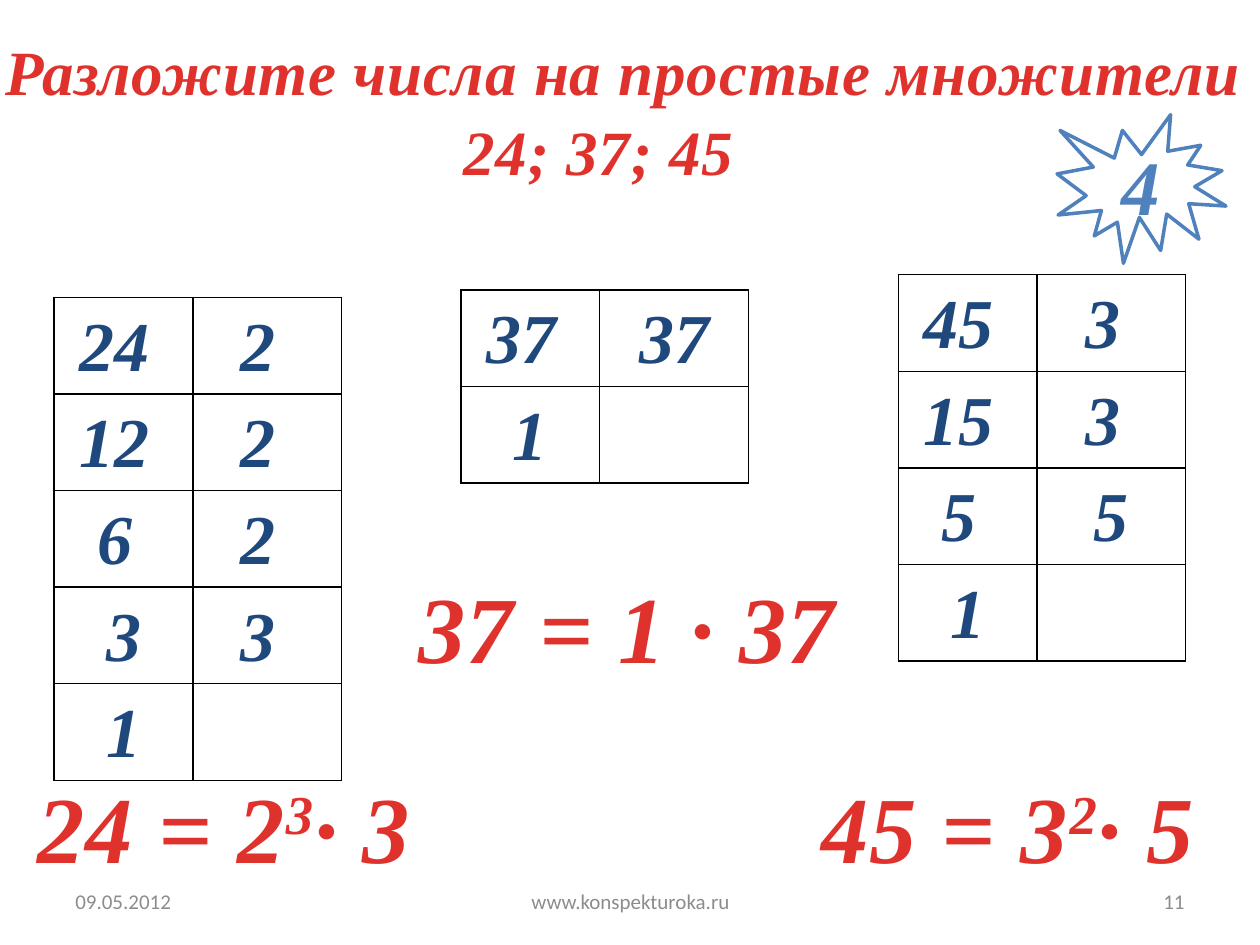
from lxml.etree import SubElement
from pptx import Presentation
from pptx.dml.color import RGBColor
from pptx.enum.shapes import MSO_SHAPE
from pptx.enum.text import MSO_ANCHOR, MSO_AUTO_SIZE, PP_ALIGN
from pptx.oxml.ns import qn
from pptx.util import Inches, Pt

COLORS = {"red": "E0322D", "navy": "1F497D", "blue": "4F81BD",
          "gray": "8C8C8C", "white": "FFFFFF", "black": "000000"}
SERIF = "Times New Roman"
COLUMNS = (1.1, 1.18)
ROW_HEIGHT = 0.76
TITLE_ONLY = 5


def color(name):
    return RGBColor.from_string(COLORS[name])


def add_span(para, text, size, shade, font=SERIF, spacing=0, baseline=0):
    """Add one run; the serif face is always bold italic on this slide."""
    span = para.add_run()
    span.text = text
    span.font.name = font
    span.font.size = Pt(size)
    span.font.color.rgb = color(shade)
    span.font.bold = span.font.italic = font == SERIF
    properties = span.font._element
    if spacing:
        properties.set("spc", str(spacing))
    if baseline:
        properties.set("baseline", str(baseline))


def place(box, left, top, width, height):
    box.left, box.top = Inches(left), Inches(top)
    box.width, box.height = Inches(width), Inches(height)


def add_box(page, area):
    return page.shapes.add_textbox(*map(Inches, area))


def write_heading(page):
    title = page.shapes.title
    place(title, -0.06, 0.21, 10.06, 0.71)
    numbers = add_box(page, (3.58, 0.84, 2.36, 0.71))
    for box, text in ((title, "Разложите числа на простые множители"),
                      (numbers, "24; 37; 45")):
        frame = box.text_frame
        frame.word_wrap = False
        frame.auto_size = MSO_AUTO_SIZE.NONE
        frame.vertical_anchor = MSO_ANCHOR.TOP
        para = frame.paragraphs[0]
        para.alignment = PP_ALIGN.LEFT
        add_span(para, text, 36, "red", spacing=50)


def add_equation(page, area, start, power="", end=""):
    frame = add_box(page, area).text_frame
    frame.word_wrap = False
    para = frame.paragraphs[0]
    for text, baseline in ((start, 0), (power, 30000), (end, 0)):
        if text:
            add_span(para, text, 54, "red", spacing=50, baseline=baseline)


def outline_cell(cell):
    properties = cell._tc.get_or_add_tcPr()
    for position, side in enumerate(("lnL", "lnR", "lnT", "lnB")):
        line = SubElement(properties, qn(f"a:{side}"), w=str(Pt(1)))
        fill = SubElement(line, qn("a:solidFill"))
        SubElement(fill, qn("a:srgbClr"), val=COLORS["black"])
        properties.insert(position, line)


def add_factor_table(page, left, top, rows):
    """Draw the division ladder: remaining number, then its prime divisor."""
    holder = page.shapes.add_table(
        len(rows), len(COLUMNS), Inches(left), Inches(top),
        Inches(sum(COLUMNS)), Inches(ROW_HEIGHT * len(rows)))
    table = holder.table
    table.first_row = table.horz_banding = False
    for column, width in zip(table.columns, COLUMNS):
        column.width = Inches(width)
    for row_index, row in enumerate(rows):
        for column_index, text in enumerate(row):
            cell = table.cell(row_index, column_index)
            cell.fill.background()
            outline_cell(cell)
            cell.margin_left = cell.margin_right = Inches(0.03)
            cell.margin_top = cell.margin_bottom = 0
            if text:
                para = cell.text_frame.paragraphs[0]
                para.alignment = PP_ALIGN.CENTER
                para.line_spacing = 1.15
                add_span(para, text, 40, "navy")


def add_badge(page, area, text):
    badge = page.shapes.add_shape(MSO_SHAPE.EXPLOSION1, *map(Inches, area))
    badge.shadow.inherit = False
    badge.fill.solid()
    badge.fill.fore_color.rgb = color("white")
    badge.line.color.rgb = color("blue")
    badge.line.width = Pt(2)
    badge.text_frame.vertical_anchor = MSO_ANCHOR.MIDDLE
    para = badge.text_frame.paragraphs[0]
    para.alignment = PP_ALIGN.CENTER
    add_span(para, text, 44, "blue")


def add_footer(page, top, height):
    for left, width, text, alignment in (
            (0.5, 2.33, "09.05.2012", PP_ALIGN.LEFT),
            (3.42, 3.17, "www.konspekturoka.ru", PP_ALIGN.CENTER),
            (7.17, 2.33, "11", PP_ALIGN.RIGHT)):
        frame = add_box(page, (left, top, width, height)).text_frame
        frame.word_wrap = True
        frame.vertical_anchor = MSO_ANCHOR.MIDDLE
        para = frame.paragraphs[0]
        para.alignment = alignment
        add_span(para, text, 12, "gray", font="Calibri")


def main():
    deck = Presentation()
    deck.slide_width, deck.slide_height = Inches(10), Inches(7.5)
    page = deck.slides.add_slide(deck.slide_layouts[TITLE_ONLY])
    write_heading(page)
    add_footer(page, 6.95, 0.4)

    # A trailing space nudges a centred number to the left of its cell.
    add_factor_table(page, 0.43, 2.36, [
        ("24 ", "2 "), ("12 ", "2 "), ("6 ", "2 "), ("3", "3 "), ("1", "")])
    add_factor_table(page, 3.66, 2.3, [("37 ", "37"), ("1", "")])
    add_factor_table(page, 7.13, 2.18, [
        ("45 ", "3 "), ("15 ", "3 "), ("5 ", "5"), ("1", "")])

    add_equation(page, (0.2, 6.05, 3.23, 1.01), "24 = 2", "3", "∙ 3")
    add_equation(page, (3.03, 4.47, 3.75, 1.01), " 37 = 1 ∙ 37")
    add_equation(page, (6.42, 6.05, 3.23, 1.01), "45 = 3", "2", "∙ 5")
    add_badge(page, (8.39, 0.91, 1.34, 1.18), "4")
    deck.save("out.pptx")


if __name__ == "__main__":
    main()
